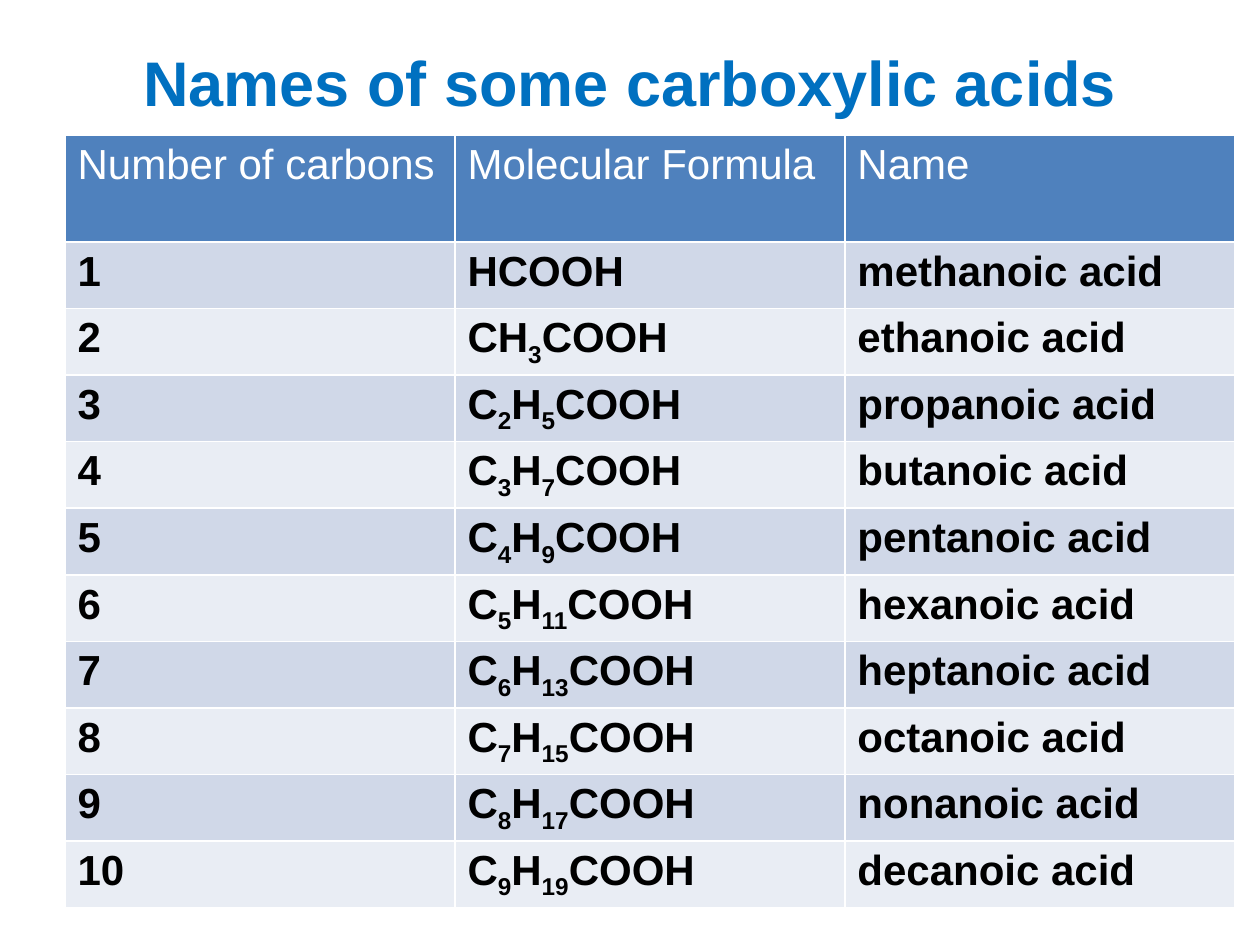
from itertools import groupby
from lxml.etree import SubElement as Sub
from pptx import Presentation
from pptx.dml.color import RGBColor as RGB
from pptx.enum.text import MSO_ANCHOR as Anchor, PP_ALIGN as Align
from pptx.oxml.ns import qn
from pptx.util import Emu, Pt

# Content
TITLE = "Names of some carboxylic acids"
HEADS = ["Number of carbons", "Molecular Formula", "Name"]
ACIDS = [
    ("HCOOH", "methanoic acid"),
    ("CH3COOH", "ethanoic acid"),
    ("C2H5COOH", "propanoic acid"),
    ("C3H7COOH", "butanoic acid"),
    ("C4H9COOH", "pentanoic acid"),
    ("C5H11COOH", "hexanoic acid"),
    ("C6H13COOH", "heptanoic acid"),
    ("C7H15COOH", "octanoic acid"),
    ("C8H17COOH", "nonanoic acid"),
    ("C9H19COOH", "decanoic acid"),
]
COLORS = {"title": "0070C0", "head": "4F81BD", "odd": "D0D8E8",
          "even": "E9EDF4", "line": "FFFFFF", "light": "FFFFFF", "dark": "000000"}

# Sizes in px
WIDE, HIGH = 1260, 945
LEFT, TOP, COL = 65, 135, 390
HEAD, BODY = 107, 666


def px(n):
    return Emu(round(n * 914400 / 126))


def write(frame, text, size=24, color="dark", bold=True, align=Align.LEFT, sub=False):
    """Write one paragraph; with sub, digits are set as subscripts."""
    para = frame.paragraphs[0]
    para.alignment = align
    parts = ["".join(g) for _, g in groupby(text, str.isdigit)] if sub else [text]
    for part in parts:
        run = para.add_run()
        run.text = part
        font = run.font
        font.name, font.size, font.bold = "Arial", Pt(size), bold
        font.color.rgb = RGB.from_string(COLORS[color])
        if sub and part.isdigit():
            run._r.get_or_add_rPr().set("baseline", "-25000")


def paint(cell, fill):
    """Give a cell thin borders and a solid fill."""
    props = cell._tc.get_or_add_tcPr()
    for side in "LRTB":
        line = Sub(props, qn(f"a:ln{side}"), w=str(Pt(1)))
        Sub(Sub(line, qn("a:solidFill")), qn("a:srgbClr"), val=COLORS["line"])
    cell.fill.solid()
    cell.fill.fore_color.rgb = RGB.from_string(COLORS[fill])


deck = Presentation()
deck.slide_width, deck.slide_height = px(WIDE), px(HIGH)
slide = deck.slides.add_slide(deck.slide_layouts[5])

# Title
title = slide.shapes.title
title.left, title.top, title.width, title.height = px(0), px(16), px(WIDE), px(130)
title.text_frame.vertical_anchor = Anchor.MIDDLE
write(title.text_frame, TITLE, size=36, color="title", align=Align.CENTER)

# Table
rows = [HEADS] + [(str(n), *acid) for n, acid in enumerate(ACIDS, 1)]
table = slide.shapes.add_table(len(rows), len(HEADS), px(LEFT), px(TOP),
                               px(COL * len(HEADS)), px(HEAD + BODY)).table
for col in table.columns:
    col.width = px(COL)
for r, row in enumerate(rows):
    table.rows[r].height = px(BODY / len(ACIDS) if r else HEAD)
    fill = ("even", "odd")[r % 2] if r else "head"
    for c, text in enumerate(row):
        cell = table.cell(r, c)
        paint(cell, fill)
        write(cell.text_frame, text, color="dark" if r else "light",
              bold=r > 0, sub=c == 1)

deck.save("out.pptx")
